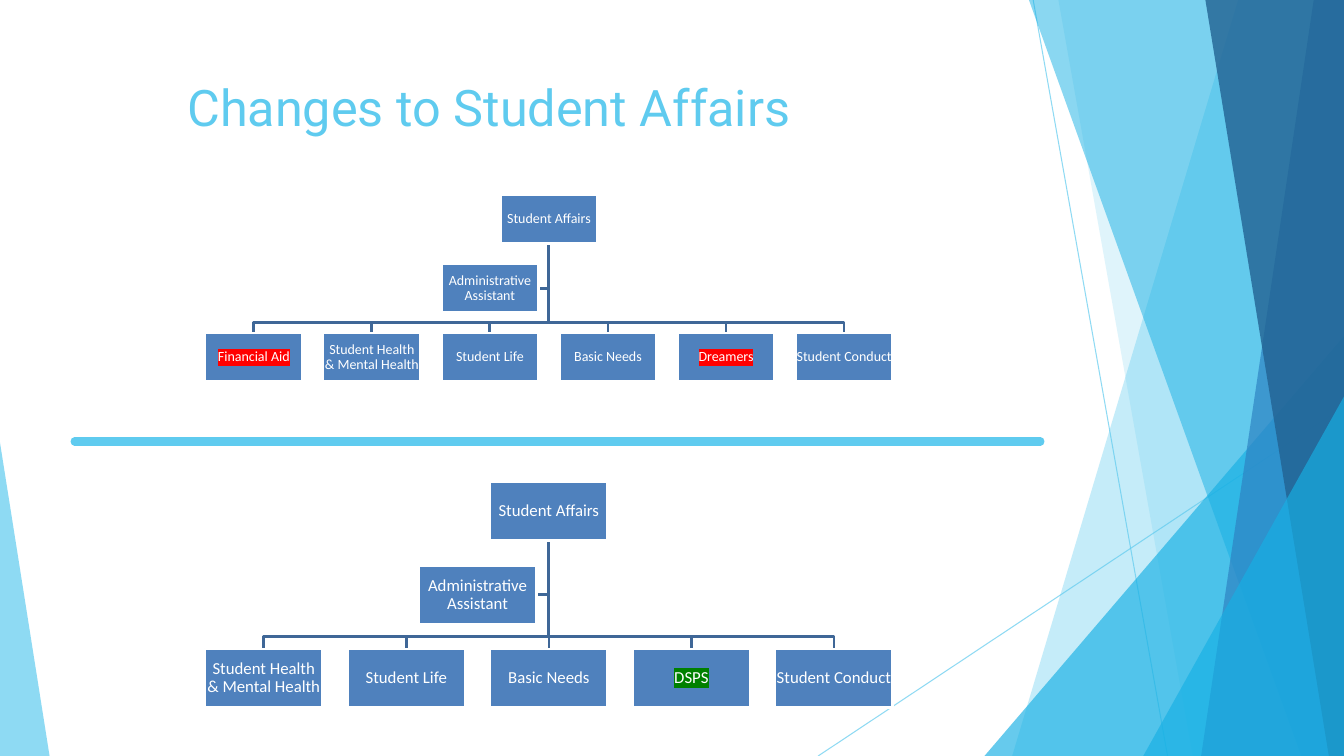
from dataclasses import dataclass

from lxml.etree import SubElement
from pptx import Presentation
from pptx.dml.color import RGBColor as RGB
from pptx.enum.shapes import MSO_CONNECTOR as Link, MSO_SHAPE as Form
from pptx.enum.text import MSO_ANCHOR as Anchor, PP_ALIGN as Align
from pptx.oxml.ns import qn
from pptx.util import Emu, Inches, Pt

COLS, ROWS = 160, 90
CELL = Inches(7.5) / ROWS  # cells are square


@dataclass(frozen=True)
class Theme:
    sky: str = "5FCBEF"
    aqua: str = "17B0E4"
    blue: str = "2E83C3"
    navy: str = "226292"
    box: str = "4F81BD"
    link: str = "3F6797"
    white: str = "FFFFFF"
    red: str = "FF0000"
    green: str = "008000"
    head: str = "Roboto"
    body: str = "Calibri"
    title: int = 36
    small: int = 10
    large: int = 12
    hair: float = 0.75
    edge: int = 2
    bar: int = 6


def cells(*nums):
    """Turn grid cells into lengths."""
    return [Emu(round(n * CELL)) for n in nums]


def fade(shape, share):
    """Set the opacity, in percent, of the shape's own colours."""
    for tint in shape._element.spPr.iter(qn("a:srgbClr")):
        SubElement(tint, qn("a:alpha"), val=str(share * 1000))


class Deck:
    def __init__(self, theme):
        self.theme = theme
        self.show = Presentation()
        self.show.slide_width, self.show.slide_height = cells(COLS, ROWS)
        self.slide = self.show.slides.add_slide(self.show.slide_layouts[5])
        self.shapes = self.slide.shapes

    def style(self, para, face, size, tint):
        font = para.font
        font.name, font.size = face, Pt(size)
        font.color.rgb = RGB.from_string(tint)

    def title(self, text, x, y, w, h):
        head = self.shapes.title
        head.left, head.top, head.width, head.height = cells(x, y, w, h)
        frame = head.text_frame
        frame.text = text
        frame.vertical_anchor = Anchor.MIDDLE
        para = frame.paragraphs[0]
        para.alignment = Align.LEFT
        self.style(para, self.theme.head, self.theme.title, self.theme.sky)

    def line(self, start, end, tint, width, share=100, cap="flat"):
        link = self.shapes.add_connector(Link.STRAIGHT, *cells(*start, *end))
        link.line.color.rgb = RGB.from_string(tint)
        link.line.width = Pt(width)
        link.line._ln.set("cap", cap)
        if share < 100:
            fade(link, share)
        SubElement(link._element.spPr, qn("a:effectLst"))

    def outline(self, points, close):
        first, *rest = [cells(*point) for point in points]
        pen = self.shapes.build_freeform(*first, scale=1.0)
        pen.add_line_segments(rest, close=close)
        shape = pen.convert_to_shape()
        shape.shadow.inherit = False
        return shape

    def paint(self, shape, tint, share):
        """Fill without a line, partly see-through."""
        shape.fill.solid()
        shape.fill.fore_color.rgb = RGB.from_string(tint)
        shape.line.fill.background()
        fade(shape, share)

    def facet(self, top, foot, tint, share):
        """Fill from a slanted left side to the slide's right edge."""
        points = [(top, 0), (COLS, 0), (COLS, ROWS), (foot, ROWS)]
        self.paint(self.outline(points, True), tint, share)

    def wedge(self, x, y, w, peak, tint, share):
        """Stand a triangle on the slide's foot."""
        shape = self.shapes.add_shape(Form.ISOSCELES_TRIANGLE,
                                      *cells(x, y, w, ROWS - y))
        shape.adjustments[0] = peak
        shape.shadow.inherit = False
        self.paint(shape, tint, share)

    def elbow(self, points):
        look = self.theme
        if len({x for x, _ in points}) == 1:
            self.line(points[0], points[-1], look.link, look.edge)
            return
        shape = self.outline(points, False)
        shape.fill.background()
        shape.line.color.rgb = RGB.from_string(look.link)
        shape.line.width = Pt(look.edge)

    def box(self, text, x, y, w, h, size, mark=None):
        look = self.theme
        shape = self.shapes.add_shape(Form.RECTANGLE, *cells(x, y, w, h))
        shape.shadow.inherit = False
        shape.fill.solid()
        shape.fill.fore_color.rgb = RGB.from_string(look.box)
        shape.line.color.rgb = RGB.from_string(look.white)
        shape.line.width = Pt(look.edge)
        frame = shape.text_frame
        frame.word_wrap = True
        frame.vertical_anchor = Anchor.MIDDLE
        frame.margin_left = frame.margin_right = Inches(0.01)
        frame.margin_top = frame.margin_bottom = Inches(0.01)
        para = frame.paragraphs[0]
        para.alignment, para.line_spacing = Align.CENTER, 0.9
        self.style(para, look.body, size, look.white)
        run = para.add_run()
        run.text = text
        if mark:
            tag = SubElement(run._r.get_or_add_rPr(), qn("a:highlight"))
            SubElement(tag, qn("a:srgbClr"), val=mark)

    def chart(self, units, x, y, span, size, marks):
        """Draw head, assistant and a row of units; all follows box width."""
        count = len(units)
        wide = span / (count + 0.21 * (count - 1))
        high, step, drop = wide / 2, wide * 1.21, wide * 0.71
        mid, side = x + span / 2, wide * 0.105
        base, low = y + high, y + 2 * drop
        desk = y + drop
        self.elbow([(mid, base), (mid, desk + high / 2),
                    (mid - side, desk + high / 2)])
        for spot in range(count):
            end = mid + (spot - (count - 1) / 2) * step
            self.elbow([(mid, base), (mid, low - side),
                        (end, low - side), (end, low)])
        self.box("Student Affairs", mid - wide / 2, y, wide, high, size)
        for spot, unit in enumerate(units):
            self.box(unit, x + spot * step, low, wide, high, size,
                     marks.get(unit))
        self.box("Administrative Assistant", mid - side - wide, desk,
                 wide, high, size)


def main():
    look = Theme()
    deck = Deck(look)

    deck.line((123, 0), (139, ROWS), look.sky, look.hair, 70)
    deck.line((COLS, 48.4), (97.4, ROWS), look.sky, look.hair, 70)
    deck.facet(147.4, 120.5, look.sky, 36)
    deck.facet(126, 142, look.sky, 20)
    deck.wedge(117.2, 40, 42.8, 1, look.aqua, 66)
    deck.facet(122.5, 154.9, look.aqua, 50)
    deck.facet(156.4, 143, look.blue, 70)
    deck.facet(143.5, 158.2, look.navy, 80)
    deck.wedge(136.1, 47.2, 23.9, 1, look.aqua, 66)
    deck.wedge(0, 52.7, 5.9, 0, look.sky, 70)

    deck.title("Changes to Student Affairs", 21.1, 8.5, 88.4, 8.4)
    core = ["Student Health & Mental Health", "Student Life", "Basic Needs"]
    last = "Student Conduct"
    deck.chart(["Financial Aid", *core, "Dreamers", last], 24.4, 23.15, 81.9,
               look.small, {"Financial Aid": look.red, "Dreamers": look.red})
    deck.chart([*core, "DSPS", last], 24.4, 57.35, 81.9,
               look.large, {"DSPS": look.green})
    deck.line((8.9, 52.55), (123.85, 52.55), look.sky, look.bar, cap="rnd")

    deck.show.save("out.pptx")


if __name__ == "__main__":
    main()
